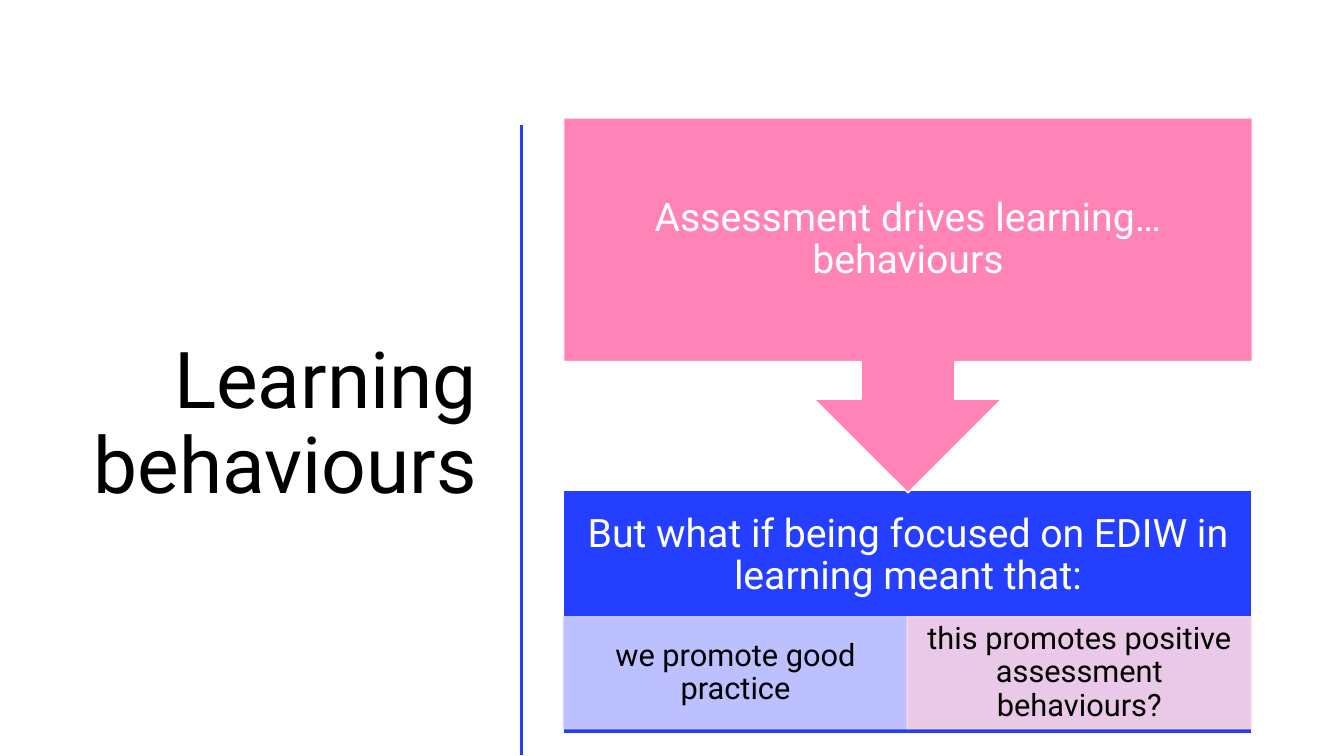
import pptx
import pptx.util
import pptx.dml.color
import pptx.enum.shapes
import pptx.enum.text
import pptx.oxml.ns
import lxml.etree

Inches = pptx.util.Inches
Pt = pptx.util.Pt
SHAPES = pptx.enum.shapes.MSO_SHAPE
ALIGN = pptx.enum.text.PP_ALIGN

BLUE, PINK, WHITE, BLACK = "243FFF", "FF83B6", "FFFFFF", "000000"
PANEL_LEFT, PANEL_WIDTH = 5.59, 6.83
ANSWER_WIDTH = 3.41
ANSWERS = [
    ("we promote good practice", "CDCFFF"),
    ("this promotes positive assessment behaviours?", "FFD9E5"),
]


def paint(color_owner, color, opacity=100):
    """Set a solid colour on a fill, with opacity in percent."""
    color_owner.solid()
    color_owner.fore_color.rgb = pptx.dml.color.RGBColor.from_string(color)
    if opacity < 100:
        tag = pptx.oxml.ns.qn("a:alpha")
        for node in color_owner._xPr.iter(pptx.oxml.ns.qn("a:srgbClr")):
            lxml.etree.SubElement(node, tag, val=str(opacity * 1000))


def write(shape, text, size, color, align=ALIGN.CENTER, insets=(0.1, 0.05)):
    """Put one paragraph in a shape; insets are horizontal and vertical."""
    frame = shape.text_frame
    frame.word_wrap = True
    frame.vertical_anchor = pptx.enum.text.MSO_ANCHOR.MIDDLE
    frame.margin_left = frame.margin_right = Inches(insets[0])
    frame.margin_top = frame.margin_bottom = Inches(insets[1])
    para = frame.paragraphs[0]
    para.text = text
    para.alignment = align
    para.line_spacing = 0.9
    para.font.name = "Roboto"
    para.font.size = Pt(size)
    paint(para.font.fill, color)


def add_text(page, bounds, text, size, color, **layout):
    box = page.shapes.add_textbox(*map(Inches, bounds))
    write(box, text, size, color, **layout)


def add_block(page, kind, bounds, color, outline=WHITE, opacity=100):
    block = page.shapes.add_shape(kind, *map(Inches, bounds))
    block.shadow.inherit = False
    paint(block.fill, color, opacity)
    paint(block.line.fill, outline, opacity)
    block.line.width = Pt(1)
    return block


def add_divider(page, x, top, bottom):
    divider = page.shapes.add_connector(
        pptx.enum.shapes.MSO_CONNECTOR.STRAIGHT,
        Inches(x), Inches(top), Inches(x), Inches(bottom))
    paint(divider.line.fill, BLUE)
    divider.line.width = Pt(2)
    lxml.etree.SubElement(divider._element.spPr, pptx.oxml.ns.qn("a:effectLst"))


def add_question(page):
    add_block(page, SHAPES.RECTANGLE, (PANEL_LEFT, 4.86, PANEL_WIDTH, 2.42), BLUE)
    add_text(page, (PANEL_LEFT, 4.86, PANEL_WIDTH, 1.31),
             "But what if being focused on EDIW in learning meant that:",
             28, WHITE, insets=(0.22, 0.22))
    for column, (text, color) in enumerate(ANSWERS):
        bounds = (PANEL_LEFT + column * ANSWER_WIDTH, 6.12, ANSWER_WIDTH, 1.11)
        answer = add_block(page, SHAPES.RECTANGLE, bounds, color, color, 90)
        write(answer, text, 22, BLACK, insets=(0.17, 0.03))


def add_statement(page):
    callout = add_block(page, SHAPES.UP_ARROW_CALLOUT,
                        (PANEL_LEFT, 1.17, PANEL_WIDTH, 3.72), PINK)
    callout.rotation = 180
    add_text(page, (PANEL_LEFT, 1.17, PANEL_WIDTH, 2.42),
             "Assessment drives learning… behaviours",
             28, WHITE, insets=(0.22, 0.22))


def main():
    deck = pptx.Presentation()
    deck.slide_width, deck.slide_height = Inches(13.33), Inches(7.5)
    page = deck.slides.add_slide(deck.slide_layouts[6])
    add_text(page, (0.52, 1.17, 4.31, 6.11), "Learning behaviours",
             56, BLACK, align=ALIGN.RIGHT)
    add_divider(page, 5.17, 1.24, 7.49)
    add_question(page)
    add_statement(page)
    deck.save("out.pptx")


if __name__ == "__main__":
    main()
